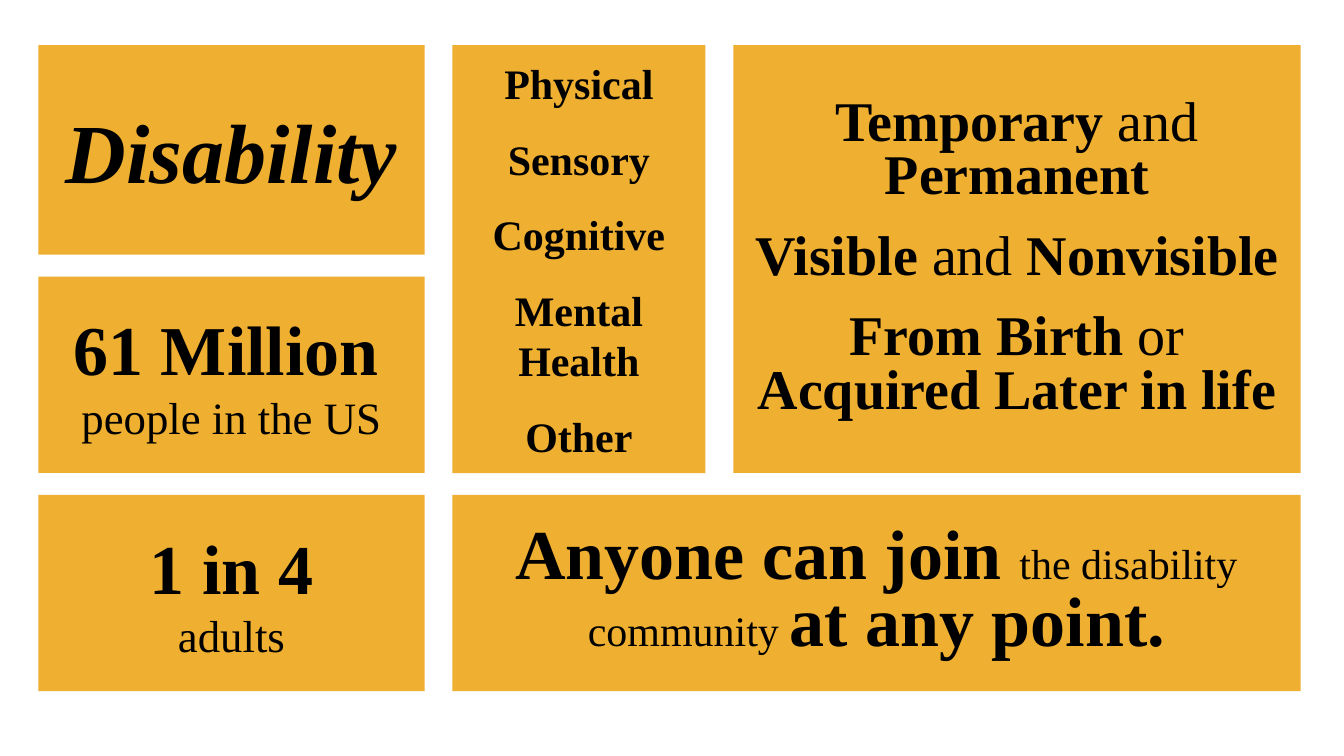
from dataclasses import dataclass

from lxml import etree
from pptx import Presentation
from pptx import util as u
from pptx.dml import color
from pptx.enum import shapes, text
from pptx.oxml import ns

COLORS = {"card": "EFAF30", "ink": "000000"}
FONT = "Times New Roman"

# Grid in centimetres
LEFT, TOP = 0.97, 1.14
COLUMNS, COLUMN_GAP = (9.73, 6.38, 14.3), 0.7
ROWS, ROW_GAP = (5.28, 4.95, 4.95), 0.55


@dataclass(frozen=True)
class Words:
    content: str
    size: float
    bold: bool = True
    italic: bool = False


@dataclass(frozen=True)
class Card:
    column: int
    row: int
    paragraphs: list[list[Words]]
    column_span: int = 1
    row_span: int = 1
    line_spacing: float = 1.0
    gap: float = 0  # points between paragraphs


def contrast(first: str, joiner: str, second: str) -> list[Words]:
    """Two bold terms with a regular joining word between them."""
    return [Words(f"{first} ", 40), Words(joiner, 40, bold=False), Words(f" {second}", 40)]


DISABILITY = Card(0, 0, [[Words("Disability", 60, italic=True)]])
KINDS = Card(
    1, 0,
    [[Words(kind, 30)] for kind in ("Physical", "Sensory", "Cognitive", "Mental Health", "Other")],
    row_span=2, gap=18,
)
OTHER_CARDS = [
    Card(0, 1, [[Words("61 Million", 50), Words(" ", 30)],
                [Words("people in the US", 32, bold=False)]]),
    Card(0, 2, [[Words("1 in 4", 50)], [Words("adults", 32, bold=False)]]),
    Card(
        2, 0,
        [contrast("Temporary", "and", "Permanent"),
         contrast("Visible", "and", "Nonvisible"),
         contrast("From Birth", "or", "Acquired Later in life")],
        row_span=2, line_spacing=0.8, gap=19,
    ),
    Card(
        1, 2,
        [[Words("Anyone can join ", 50),
          Words("the disability community ", 30, bold=False),
          Words("at any point.", 50)]],
        column_span=2, line_spacing=0.8,
    ),
]


def extent(origin: float, sizes: tuple, gap: float, first: int, span: int) -> tuple:
    """Start and length of a run of grid tracks."""
    start = origin + sum(sizes[:first]) + gap * first
    length = sum(sizes[first:first + span]) + gap * (span - 1)
    return u.Cm(start), u.Cm(length)


def fill_card(shape, card: Card) -> None:
    shape.left, shape.width = extent(LEFT, COLUMNS, COLUMN_GAP, card.column, card.column_span)
    shape.top, shape.height = extent(TOP, ROWS, ROW_GAP, card.row, card.row_span)
    shape.shadow.inherit = False
    shape.fill.solid()
    shape.fill.fore_color.rgb = color.RGBColor.from_string(COLORS["card"])
    shape.line.fill.background()

    frame = shape.text_frame
    frame.word_wrap = True
    frame.auto_size = text.MSO_AUTO_SIZE.NONE
    frame.vertical_anchor = text.MSO_ANCHOR.MIDDLE
    for index, line in enumerate(card.paragraphs):
        paragraph = frame.add_paragraph() if index else frame.paragraphs[0]
        paragraph.alignment = text.PP_ALIGN.CENTER
        paragraph.line_spacing = card.line_spacing
        paragraph.space_before = u.Pt(card.gap if index else 0)
        paragraph.space_after = u.Pt(0)
        for words in line:
            run = paragraph.add_run()
            run.text = words.content
            run.font.name = FONT
            run.font.size = u.Pt(words.size)
            run.font.bold = words.bold
            run.font.italic = words.italic
            run.font.color.rgb = color.RGBColor.from_string(COLORS["ink"])


def remove_bullets(frame) -> None:
    for paragraph in frame.paragraphs:
        properties = paragraph._p.get_or_add_pPr()
        properties.set("marL", "0")
        properties.set("indent", "0")
        etree.SubElement(properties, ns.qn("a:buNone"))


def main() -> None:
    deck = Presentation()
    deck.slide_width, deck.slide_height = u.Cm(33.87), u.Cm(19.05)
    slide = deck.slides.add_slide(deck.slide_layouts[1])

    fill_card(slide.shapes.title, DISABILITY)
    kinds_list = slide.placeholders[1]
    fill_card(kinds_list, KINDS)
    remove_bullets(kinds_list.text_frame)
    for card in OTHER_CARDS:
        fill_card(slide.shapes.add_shape(shapes.MSO_SHAPE.RECTANGLE, 0, 0, 0, 0), card)

    deck.save("out.pptx")


if __name__ == "__main__":
    main()
